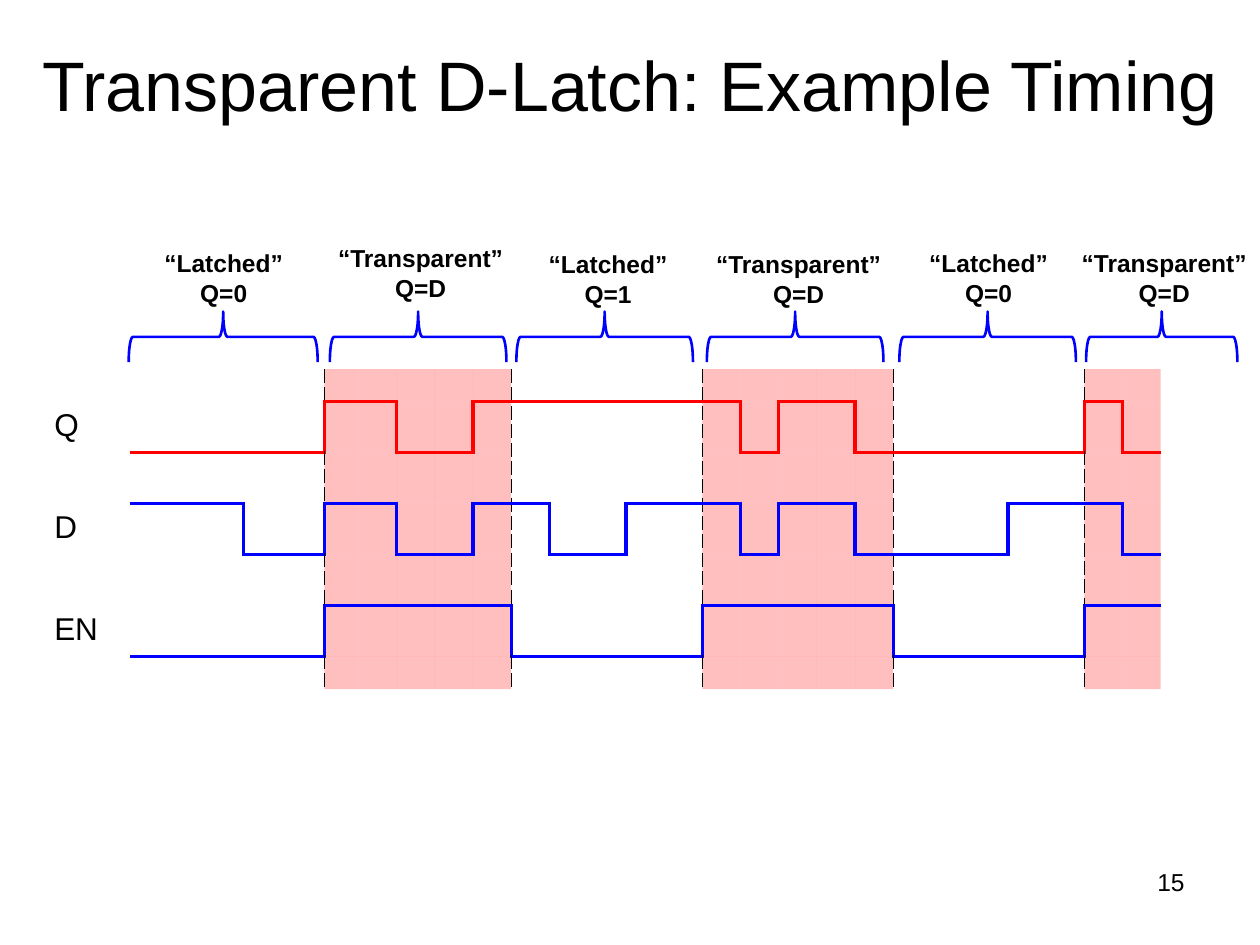
import dataclasses

import pptx
import pptx.dml.color
import pptx.enum.shapes
import pptx.enum.text
import pptx.oxml.ns
import pptx.util
from lxml import etree

Cm, Pt = pptx.util.Cm, pptx.util.Pt
RGB = pptx.dml.color.RGBColor.from_string
ALIGN = pptx.enum.text.PP_ALIGN
ANCHOR = pptx.enum.text.MSO_ANCHOR
qn = pptx.oxml.ns.qn


@dataclasses.dataclass(frozen=True)
class Theme:
    font: str = "Arial"
    ink: str = "000000"
    paper: str = "FFFFFF"
    red: str = "FF0000"
    blue: str = "0000FF"
    shade_alpha: int = 25000
    title: int = 40
    signal: int = 18
    small: int = 14
    wave: float = 2.25
    brace: float = 1.5
    dash: float = 1


THEME = Theme()
NO_STYLE_NO_GRID = "{2D5ABB26-0587-4C30-8999-92F81FD0307C}"

COLUMNS = [1.78, 0.84, 0.69, 0.76, 0.97, 0.66, 0.69] + [0.77] * 21
ROWS = [0.65] + [1.03] * 5 + [0.65]
# Levels, one sign per time step: H is high, L is low.
ENABLE = "LLLLLHHHHHLLLLLHHHHHLLLLLHH"
SIGNALS = {
    1: ("Q", "LLLLLHHLLHHHHHHHLHHLLLLLLHL", THEME.red),
    3: ("D", "HHHLLHHLLHHLLHHHLHHLLLLHHHL", THEME.blue),
    5: ("EN", ENABLE, THEME.blue),
}
LABEL_WIDTH = {"“Latched”": 2.92, "“Transparent”": 3.86}
# State, output, brace centre, brace span, label shift, label rise
PHASES = [
    ("“Latched”", "Q=0", 4.5, 3.81, 0.01, 1.4),
    ("“Transparent”", "Q=D", 8.43, 3.56, 0.05, 1.5),
    ("“Latched”", "Q=1", 12.19, 3.56, 0.07, 1.38),
    ("“Transparent”", "Q=D", 16.03, 3.56, 0.07, 1.38),
    ("“Latched”", "Q=0", 19.91, 3.56, 0.02, 1.4),
    ("“Transparent”", "Q=D", 23.42, 3.05, 0.05, 1.4),
]


def write(tf, lines, size, align=ALIGN.LEFT, **font):
    """Fill a text frame with one paragraph for each line."""
    fmt = {"name": THEME.font, "size": Pt(size), **font}
    for i, line in enumerate(lines):
        p = tf.add_paragraph() if i else tf.paragraphs[0]
        p.alignment = align
        r = p.add_run()
        r.text = line
        for name, value in fmt.items():
            setattr(r.font, name, value)
        r.font.color.rgb = RGB(THEME.ink)


def add_text(shapes, box, lines, size, align, frame, **font):
    tf = shapes.add_textbox(*map(Cm, box)).text_frame
    for name, value in frame.items():
        setattr(tf, name, value)
    write(tf, lines, size, align, **font)


def add_border(cell, side, edge):
    """Draw one side of a cell; a side without an edge is switched off."""
    tc_pr = cell._tc.get_or_add_tcPr()
    if edge is None:
        ln = etree.SubElement(tc_pr, qn(f"a:ln{side}"), w="0")
        etree.SubElement(ln, qn("a:noFill"))
        return
    color, width, dash = edge
    ln = etree.SubElement(tc_pr, qn(f"a:ln{side}"), w=str(Pt(width)))
    fill = etree.SubElement(ln, qn("a:solidFill"))
    etree.SubElement(fill, qn("a:srgbClr"), val=color)
    etree.SubElement(ln, qn("a:prstDash"), val=dash)


def vertical_edge(row, step):
    """Line at the start of a time step: a signal's change, or an enable change."""
    if not 0 < step < len(ENABLE):
        return None
    if row in SIGNALS:
        _, levels, color = SIGNALS[row]
        if levels[step - 1] != levels[step]:
            return color, THEME.wave, "solid"
    if ENABLE[step - 1] != ENABLE[step]:
        return THEME.ink, THEME.dash, "dash"
    return None


def horizontal_edge(row, step):
    """Line above a row: the high level of its signal or the low level of the one above."""
    if step < 0:
        return None
    for signal_row, level in ((row, "H"), (row - 1, "L")):
        if signal_row in SIGNALS:
            _, levels, color = SIGNALS[signal_row]
            if levels[step] == level:
                return color, THEME.wave, "solid"
    return None


def format_cell(cell, row, step):
    """Set borders and fill; the label column is step -1."""
    edges = {
        "L": vertical_edge(row, step),
        "R": vertical_edge(row, step + 1),
        "T": horizontal_edge(row, step),
        "B": horizontal_edge(row + 1, step),
    }
    for side, edge in edges.items():
        add_border(cell, side, edge)
    shaded = step >= 0 and ENABLE[step] == "H"
    cell.fill.solid()
    cell.fill.fore_color.rgb = RGB(THEME.red if shaded else THEME.paper)
    if shaded:
        color = cell._tc.tcPr.find(qn("a:solidFill")).find(qn("a:srgbClr"))
        etree.SubElement(color, qn("a:alpha"), val=str(THEME.shade_alpha))


def shrink_empty(cell):
    """Keep an empty cell from stretching its row."""
    for side in ("left", "right", "top", "bottom"):
        setattr(cell, f"margin_{side}", 0)
    p = cell.text_frame.paragraphs[0]._p
    etree.SubElement(p, qn("a:endParaRPr"), sz="400")


def add_timing_table(s, left, top):
    size = map(Cm, (left, top, sum(COLUMNS), sum(ROWS)))
    table = s.shapes.add_table(len(ROWS), len(COLUMNS), *size).table
    table.first_row = table.horz_banding = False
    table._tbl.tblPr.find(qn("a:tableStyleId")).text = NO_STYLE_NO_GRID
    for column, width in zip(table.columns, COLUMNS):
        column.width = Cm(width)
    for row, height in enumerate(ROWS):
        table.rows[row].height = Cm(height)
        for col in range(len(COLUMNS)):
            cell = table.cell(row, col)
            format_cell(cell, row, col - 1)
            if col == 0 and row in SIGNALS:
                write(cell.text_frame, [SIGNALS[row][0]], THEME.signal)
            else:
                shrink_empty(cell)


def add_phase(s, left, top, width, height, state, output, shift, rise):
    """Upward brace filling the box, with its label above."""
    shapes = s.shapes.add_group_shape().shapes
    centre = left + width / 2
    brace = shapes.add_shape(
        pptx.enum.shapes.MSO_SHAPE.RIGHT_BRACE,
        Cm(centre - height / 2), Cm(top + height / 2 - width / 2), Cm(height), Cm(width))
    brace.rotation = 270
    brace.shadow.inherit = False
    brace.fill.background()
    brace.line.color.rgb = RGB(THEME.blue)
    brace.line.width = Pt(THEME.brace)
    label = LABEL_WIDTH[state]
    add_text(shapes, (centre + shift - label / 2, top - rise, label, 1.45),
             [state, output], THEME.small, ALIGN.CENTER, {"word_wrap": False}, bold=True)


def main():
    prs = pptx.Presentation()
    prs.slide_width, prs.slide_height = Cm(25.4), Cm(19.05)
    s = prs.slides.add_slide(prs.slide_layouts[6])
    add_text(s.shapes, (0, 0, 25.4, 3.38), ["Transparent D-Latch: Example Timing"],
             THEME.title, ALIGN.CENTER,
             {"word_wrap": True, "vertical_anchor": ANCHOR.MIDDLE})
    add_text(s.shapes, (18.21, 17.35, 5.92, 1.32), ["15"], THEME.small, ALIGN.RIGHT,
             {"word_wrap": True})
    add_timing_table(s, 0.84, 7.44)
    for state, output, centre, span, shift, rise in PHASES:
        add_phase(s, centre - span / 2, 6.28, span, 1.02, state, output, shift, rise)
    prs.save("out.pptx")


if __name__ == "__main__":
    main()
